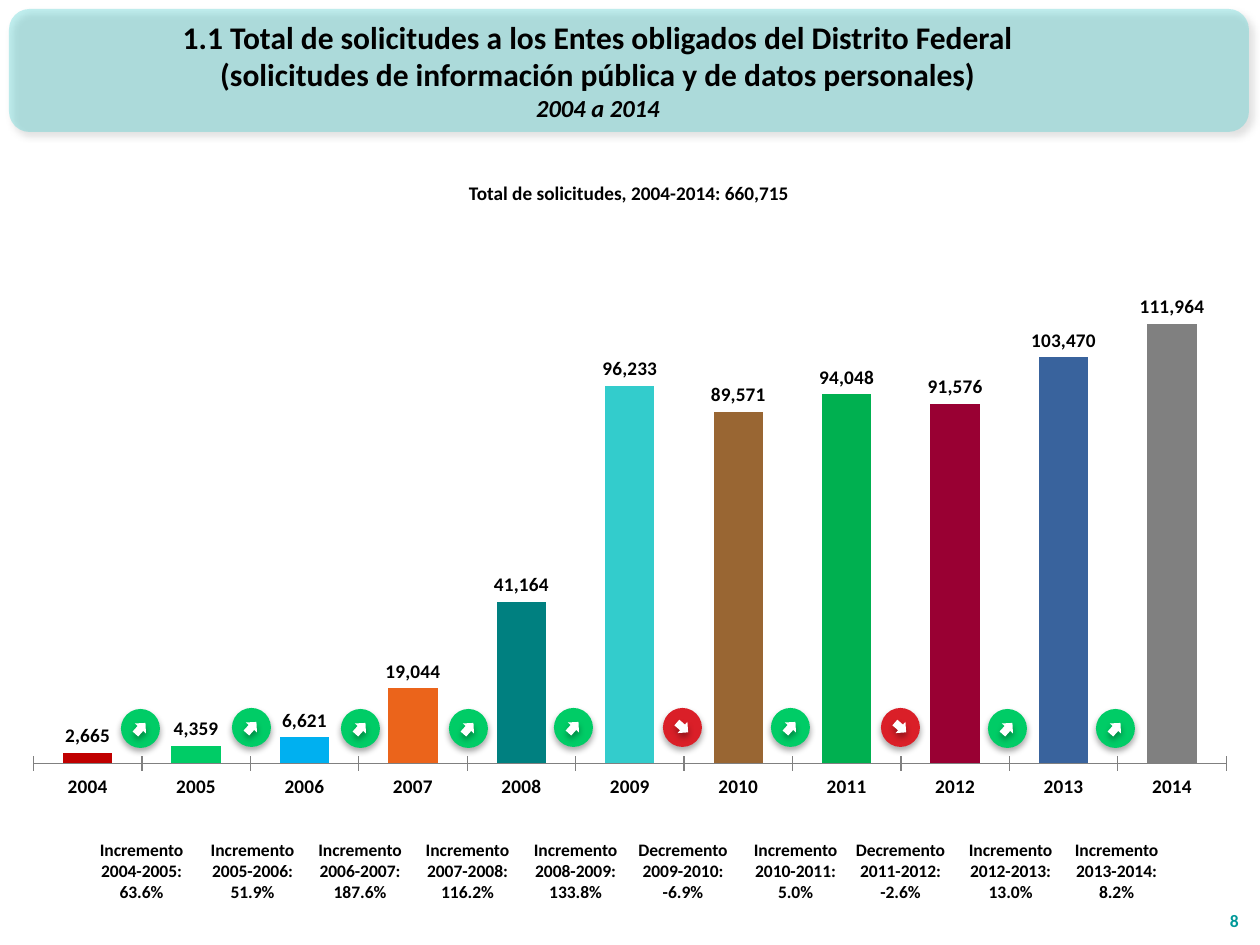
from dataclasses import dataclass

from lxml.etree import SubElement
from pptx import Presentation
from pptx.chart.data import CategoryChartData
from pptx.dml.color import RGBColor
from pptx.enum.chart import XL_CHART_TYPE, XL_LABEL_POSITION, XL_TICK_LABEL_POSITION, XL_TICK_MARK
from pptx.enum.shapes import MSO_SHAPE
from pptx.enum.text import MSO_ANCHOR, PP_ALIGN
from pptx.oxml import parse_xml
from pptx.oxml.ns import qn
from pptx.util import Emu, Pt

EMU_PER_PX = 914400 / 126
FONT = "Calibri"
DRAWING_NS = "http://schemas.openxmlformats.org/drawingml/2006/main"
CHART_NS = "http://schemas.openxmlformats.org/drawingml/2006/chart"
UP, DOWN = "00CC66", "DA1F28"


def px(n: int) -> Emu:
    return Emu(round(n * EMU_PER_PX))


def rgb(color: str) -> RGBColor:
    return RGBColor.from_string(color)


@dataclass(frozen=True)
class Box:
    left: int
    top: int
    width: int
    height: int

    def emu(self) -> tuple:
        return px(self.left), px(self.top), px(self.width), px(self.height)


@dataclass(frozen=True)
class Line:
    text: str
    size: int
    italic: bool = False
    color: str = "000000"


@dataclass(frozen=True)
class Shadow:
    alpha: int
    blur: float
    dist: float
    angle: int


@dataclass(frozen=True)
class Bar:
    year: str
    total: int
    color: str


@dataclass(frozen=True)
class Change:
    """Year-on-year change: its percentage, badge position and caption span."""
    pct: str
    badge_left: int
    badge_top: int
    text_left: int
    text_width: int


BANNER_SHADOW = Shadow(40, 4, 3, 45)
BADGE_SHADOW = Shadow(32, 3.5, 2.2, 90)

BARS = [
    Bar("2004", 2665, "C00000"),
    Bar("2005", 4359, "00CC66"),
    Bar("2006", 6621, "00B0F0"),
    Bar("2007", 19044, "EB641B"),
    Bar("2008", 41164, "008080"),
    Bar("2009", 96233, "33CCCC"),
    Bar("2010", 89571, "996633"),
    Bar("2011", 94048, "00B050"),
    Bar("2012", 91576, "990033"),
    Bar("2013", 103470, "39639D"),
    Bar("2014", 111964, "808080"),
]

CHANGES = [
    Change("63.6%", 121, 709, 86, 111),
    Change("51.9%", 232, 708, 190, 125),
    Change("187.6%", 341, 709, 299, 122),
    Change("116.2%", 449, 709, 410, 115),
    Change("133.8%", 554, 708, 515, 121),
    Change("-6.9%", 663, 708, 620, 126),
    Change("5.0%", 771, 708, 735, 121),
    Change("-2.6%", 881, 708, 840, 121),
    Change("13.0%", 988, 709, 950, 121),
    Change("8.2%", 1096, 709, 1056, 121),
]


def write(tf, lines: list[Line], align=PP_ALIGN.CENTER, anchor=MSO_ANCHOR.TOP) -> None:
    tf.word_wrap = True
    tf.vertical_anchor = anchor
    for i, line in enumerate(lines):
        p = tf.paragraphs[0] if i == 0 else tf.add_paragraph()
        p.alignment = align
        p.line_spacing = 1.0
        p.space_before = Pt(0)
        r = p.add_run()
        r.text = line.text
        r.font.name = FONT
        r.font.size = Pt(line.size)
        r.font.bold = True
        r.font.italic = line.italic
        r.font.color.rgb = rgb(line.color)


def add_text(slide, box: Box, lines: list[Line], **layout) -> None:
    write(slide.shapes.add_textbox(*box.emu()).text_frame, lines, **layout)


def add_filled(slide, kind, box: Box, color: str, shadow: Shadow):
    sp = slide.shapes.add_shape(kind, *box.emu())
    sp.fill.solid()
    sp.fill.fore_color.rgb = rgb(color)
    sp.line.fill.background()
    sp._element.spPr.append(parse_xml(
        f'<a:effectLst xmlns:a="{DRAWING_NS}"><a:outerShdw blurRad="{Pt(shadow.blur)}" '
        f'dist="{Pt(shadow.dist)}" dir="{shadow.angle * 60000}" algn="ctr" rotWithShape="0">'
        f'<a:srgbClr val="000000"><a:alpha val="{shadow.alpha * 1000}"/></a:srgbClr>'
        f'</a:outerShdw></a:effectLst>'))
    return sp


def add_header(slide) -> None:
    banner = add_filled(slide, MSO_SHAPE.ROUNDED_RECTANGLE, Box(9, 9, 1240, 123), "33CCCC", BANNER_SHADOW)
    color = banner._element.spPr.find(qn("a:solidFill")).find(qn("a:srgbClr"))
    SubElement(color, qn("a:alpha"), val="30000")
    title = slide.shapes.title
    title.left, title.top, title.width, title.height = Box(10, 11, 1176, 118).emu()
    write(title.text_frame, [
        Line("1.1 Total de solicitudes a los Entes obligados del Distrito Federal", 18),
        Line("(solicitudes de información pública y de datos personales)", 18),
        Line("2004 a 2014", 14, italic=True),
    ], anchor=MSO_ANCHOR.MIDDLE)
    banner._element.addnext(title._element)  # title text in front of the banner


def add_totals_chart(slide) -> None:
    data = CategoryChartData(number_format="#,##0")
    data.categories = [b.year for b in BARS]
    data.add_series("Total de solicitudes", [b.total for b in BARS])
    chart = slide.shapes.add_chart(XL_CHART_TYPE.COLUMN_CLUSTERED, *Box(20, 255, 1221, 568).emu(), data).chart
    chart.has_legend = chart.has_title = False
    chart.font.name, chart.font.size, chart.font.bold = FONT, Pt(11), True
    chart.font.color.rgb = rgb("000000")

    values = chart.value_axis
    values.minimum_scale, values.maximum_scale, values.major_unit = 0, 120000, 20000
    values.has_major_gridlines = values.visible = False
    years = chart.category_axis
    years.major_tick_mark = XL_TICK_MARK.CROSS
    years.tick_label_position = XL_TICK_LABEL_POSITION.LOW
    years.format.line.color.rgb = rgb("808080")

    plot = chart.plots[0]
    plot.gap_width = 120
    plot.vary_by_categories = False
    plot.has_data_labels = True
    labels = plot.data_labels
    labels.show_value = True
    labels.number_format, labels.number_format_is_linked = "#,##0", False
    labels.position = XL_LABEL_POSITION.OUTSIDE_END
    for i, bar in enumerate(BARS):
        fill = plot.series[0].points[i].format.fill
        fill.solid()
        fill.fore_color.rgb = rgb(bar.color)

    area = chart._chartSpace.chart.plotArea
    for old in area.findall(qn("c:layout")):
        area.remove(old)
    frame = {"x": 0.011, "y": 0.066, "w": 0.977, "h": 0.829}
    area.insert(0, parse_xml(
        f'<c:layout xmlns:c="{CHART_NS}"><c:manualLayout><c:layoutTarget val="inner"/>'
        '<c:xMode val="edge"/><c:yMode val="edge"/>'
        + "".join(f'<c:{k} val="{v}"/>' for k, v in frame.items())
        + '</c:manualLayout></c:layout>'))


def add_change(slide, change: Change, start: str, end: str) -> None:
    down = change.pct.startswith("-")
    left, top = change.badge_left, change.badge_top
    add_filled(slide, MSO_SHAPE.OVAL, Box(left, top, 39, 39), DOWN if down else UP, BADGE_SHADOW)
    arrow = add_filled(slide, MSO_SHAPE.RIGHT_ARROW, Box(left + 12, top + 12, 15, 15), "FFFFFF", BADGE_SHADOW)
    arrow.rotation = 41 if down else 312
    texts = ["Decremento" if down else "Incremento", f"{start}-{end}:", change.pct]
    add_text(slide, Box(change.text_left, 833, change.text_width, 77), [Line(t, 10) for t in texts])


def main() -> None:
    prs = Presentation()
    prs.slide_width, prs.slide_height = px(1260), px(945)
    slide = prs.slides.add_slide(prs.slide_layouts[5])
    add_header(slide)
    add_text(slide, Box(234, 175, 790, 37), [Line("Total de solicitudes, 2004-2014: 660,715", 11)])
    add_totals_chart(slide)
    for change, start, end in zip(CHANGES, BARS, BARS[1:]):
        add_change(slide, change, start.year, end.year)
    add_text(slide, Box(1191, 887, 60, 50), [Line("8", 10, color="009999")],
             align=PP_ALIGN.RIGHT, anchor=MSO_ANCHOR.BOTTOM)
    prs.save("out.pptx")


if __name__ == "__main__":
    main()
